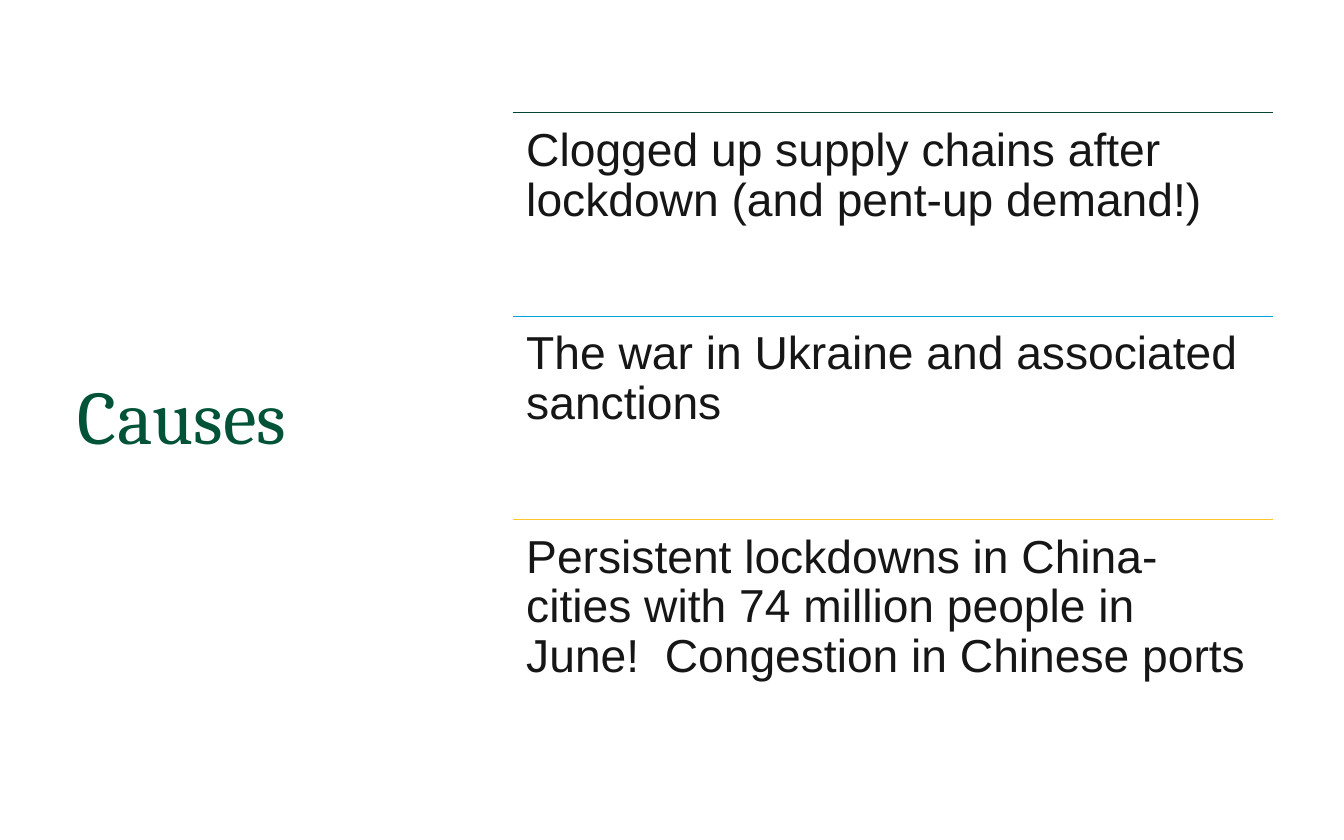
from pptx import Presentation
from pptx.dml.color import RGBColor
from pptx.enum import shapes, text
from pptx.oxml import ns
from pptx.util import Pt
from lxml import etree

CAUSES = [
    ("Clogged up supply chains after lockdown (and pent-up demand!)", "034638"),
    ("The war in Ukraine and associated sanctions", "00A3E0"),
    ("Persistent lockdowns in China- cities with 74 million people in June!  "
     "Congestion in Chinese ports", "FFC72C"),
]
CAUSE_LEFT, CAUSE_TOP = 488.2, 107.3
CAUSE_WIDTH, CAUSE_HEIGHT = 724.3, 193.7
CAUSE_INSET = 13


def colour(value):
    return RGBColor.from_string(value)


def format_text(frame, wording, font_name, size, font_colour, spacing):
    frame.word_wrap = True
    frame.auto_size = text.MSO_AUTO_SIZE.NONE
    paragraph = frame.paragraphs[0]
    paragraph.text = wording
    paragraph.alignment = text.PP_ALIGN.LEFT
    paragraph.line_spacing = spacing
    font = paragraph.runs[0].font
    font.name = font_name
    font.size = Pt(size)
    font.color.rgb = colour(font_colour)


def set_heading(slide, wording):
    heading = slide.shapes.title
    heading.left, heading.top = Pt(67), Pt(107.3)
    heading.width, heading.height = Pt(359.3), Pt(586)
    heading.text_frame.vertical_anchor = text.MSO_ANCHOR.MIDDLE
    format_text(heading.text_frame, wording, "Cambria", 72, "005336", 0.9)


def add_divider(slide, top, line_colour):
    divider = slide.shapes.add_connector(
        shapes.MSO_CONNECTOR.STRAIGHT,
        Pt(CAUSE_LEFT), Pt(top), Pt(CAUSE_LEFT + CAUSE_WIDTH), Pt(top))
    divider.line.color.rgb = colour(line_colour)
    divider.line.width = Pt(0.85)
    etree.SubElement(divider._element.spPr, ns.qn("a:effectLst"))


def add_cause(slide, top, wording):
    cause = slide.shapes.add_textbox(
        Pt(CAUSE_LEFT), Pt(top), Pt(CAUSE_WIDTH), Pt(CAUSE_HEIGHT))
    frame = cause.text_frame
    frame.margin_left = frame.margin_right = Pt(CAUSE_INSET)
    frame.margin_top = frame.margin_bottom = Pt(CAUSE_INSET)
    frame.vertical_anchor = text.MSO_ANCHOR.TOP
    format_text(frame, wording, "Arial", 44, "171616", 0.9)


def main():
    deck = Presentation()
    deck.slide_width, deck.slide_height = Pt(1280), Pt(800)
    slide = deck.slides.add_slide(deck.slide_layouts[5])
    set_heading(slide, "Causes")
    for row, (wording, line_colour) in enumerate(CAUSES):
        top = CAUSE_TOP + row * CAUSE_HEIGHT
        add_divider(slide, top, line_colour)
        add_cause(slide, top, wording)
    deck.save("out.pptx")


if __name__ == "__main__":
    main()
